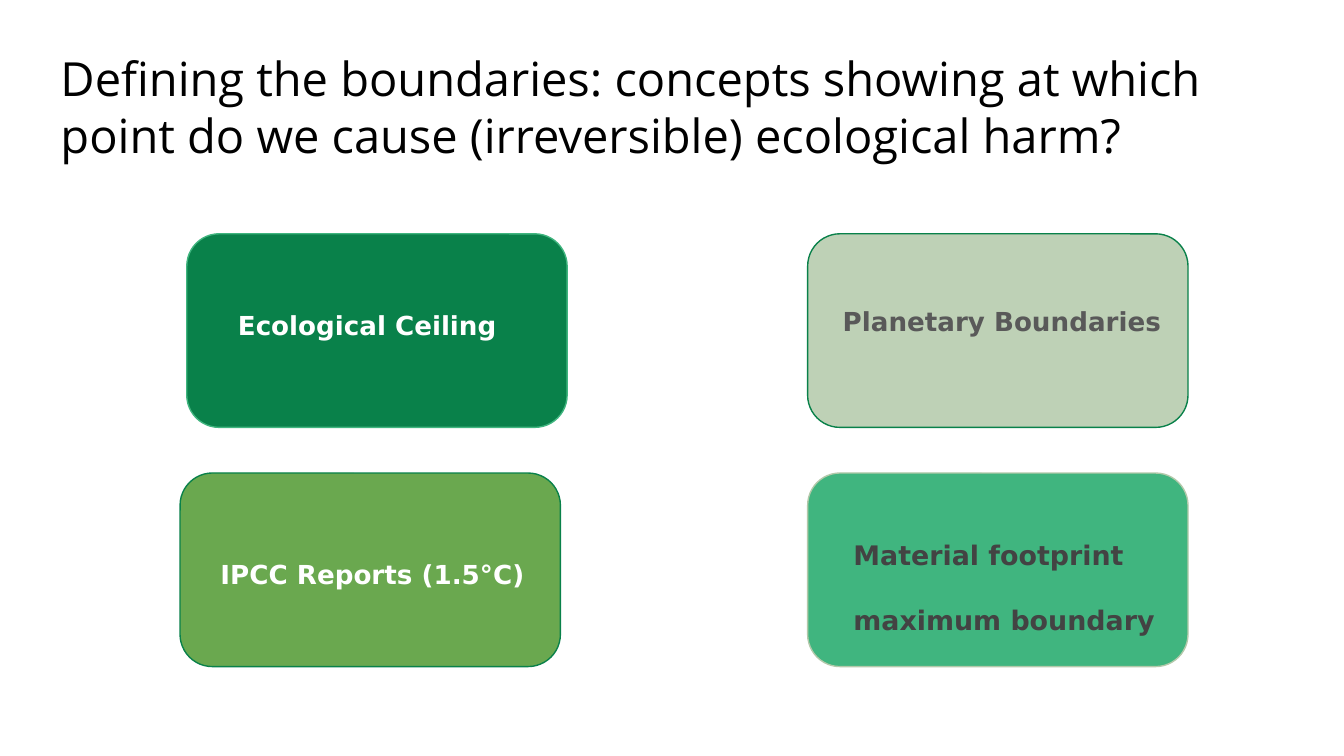
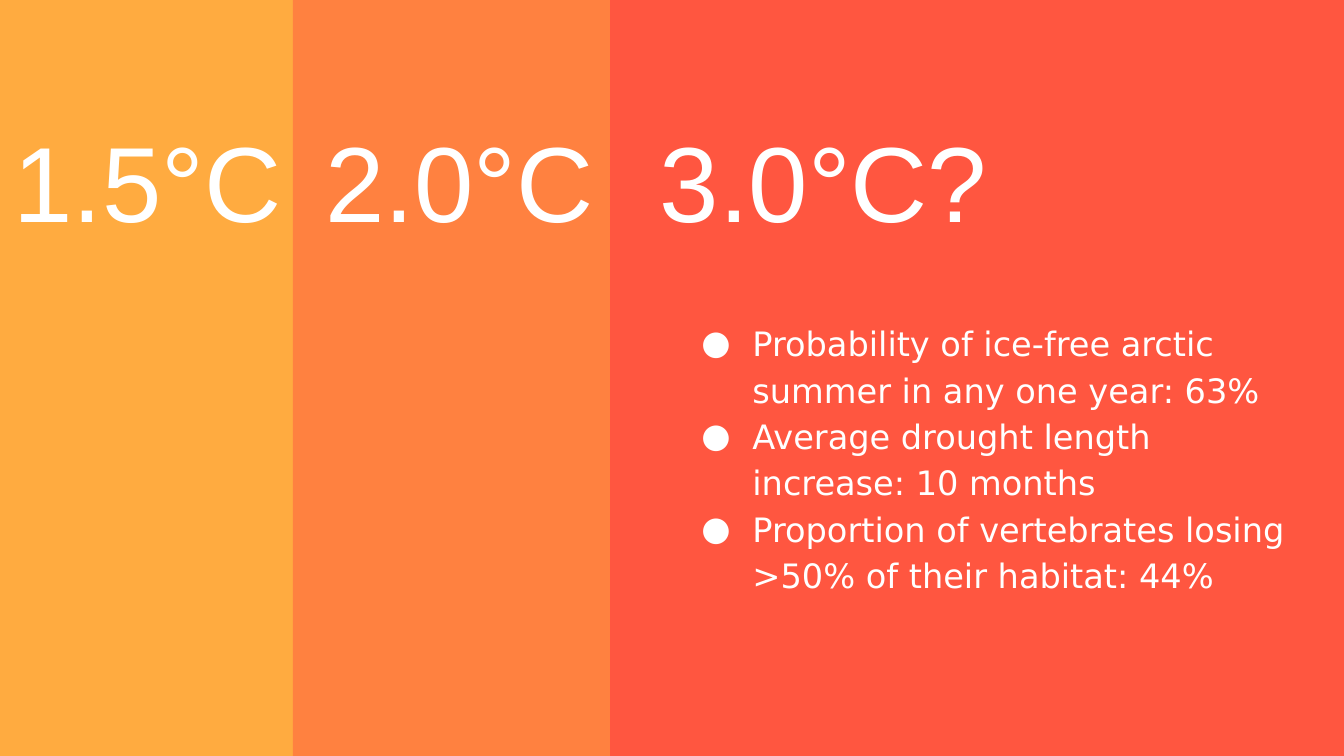
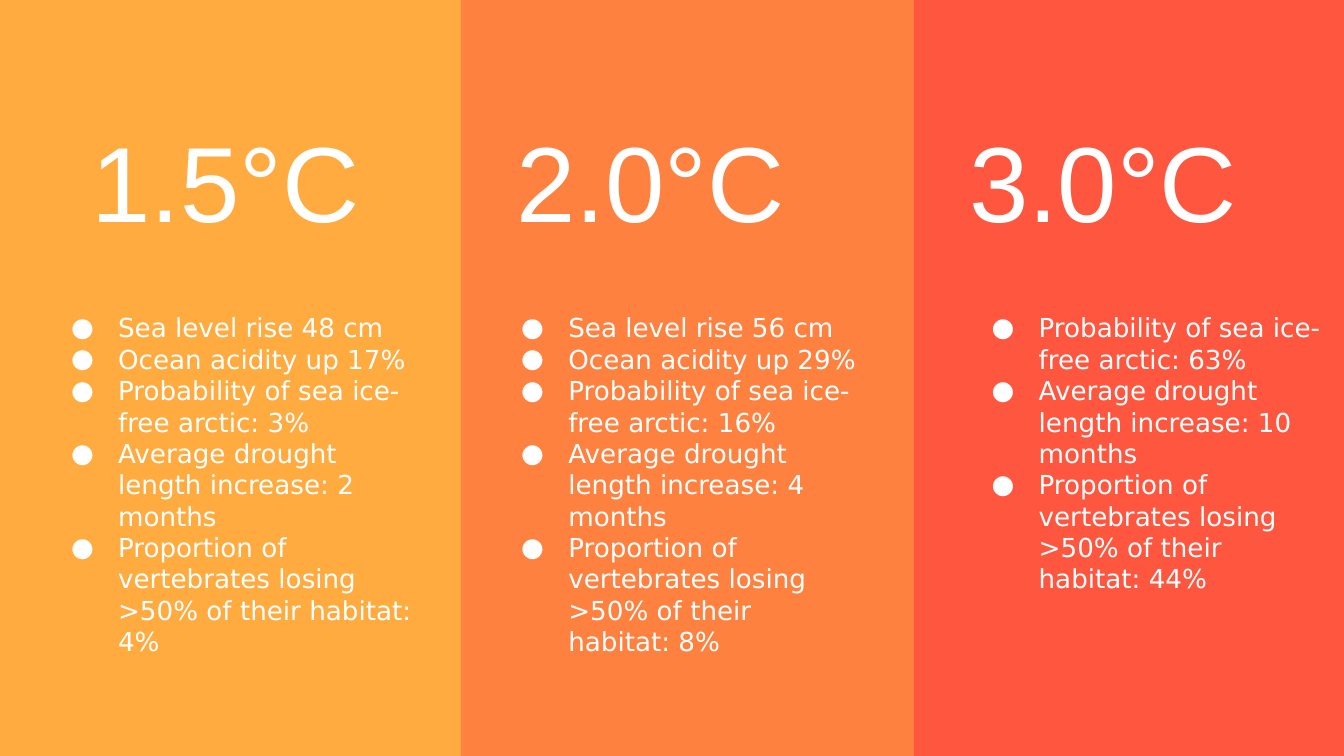
from lxml.etree import SubElement
from pptx import Presentation
from pptx.dml.color import RGBColor as RGB
from pptx.enum.shapes import MSO_SHAPE as Form
from pptx.enum.text import MSO_ANCHOR as Anchor, MSO_AUTO_SIZE as Fit, PP_ALIGN as Align
from pptx.oxml.ns import qn
from pptx.util import Inches, Pt

WHITE = RGB(0xFF, 0xFF, 0xFF)
BLACK = RGB(0, 0, 0)
DARK = RGB(0x43, 0x43, 0x43)
GRAY = RGB(0x59, 0x59, 0x59)
PINE = RGB(0x09, 0x81, 0x4A)
MINT = RGB(0x40, 0xB5, 0x7F)
LEAF = RGB(0x6A, 0xA8, 0x4F)
SAGE = RGB(0xB3, 0xC9, 0xAA)
AMBER = RGB(0xFF, 0xAB, 0x40)
ORANGE = RGB(0xFF, 0x81, 0x40)
RED = RGB(0xFF, 0x56, 0x40)
WIDTH = 10
HEIGHT = WIDTH * 9 / 16
BODY = "DejaVu Sans"
COMPARE = 4


def place(shape, box):
    """Set a shape's left, top, width and height in inches."""
    shape.left, shape.top, shape.width, shape.height = map(Inches, box)


def write(shape, *lines, size=14, font=BODY, color=WHITE, bold=False,
          space=1.0, after=0, hang=None, fit=Fit.NONE):
    """Fill a shape with formatted paragraphs, bulleted when hang is given."""
    frame = shape.text_frame
    frame.text = "\n".join(lines)
    frame.word_wrap, frame.auto_size = True, fit
    frame.vertical_anchor = Anchor.TOP
    frame.margin_left = frame.margin_right = Inches(0.1)
    frame.margin_top = frame.margin_bottom = Inches(0.1)
    for para in frame.paragraphs:
        para.alignment = Align.LEFT
        para.line_spacing = space
        para.space_before, para.space_after = Pt(0), Pt(after)
        bullet(para, hang, color)
        face = para.runs[0].font
        face.size, face.name, face.bold = Pt(size), font, bold
        face.color.rgb = color


def bullet(para, hang, color):
    """Give a paragraph a round bullet, or none."""
    props = para._p.get_or_add_pPr()
    props.set("marL", str(Inches(0.5) if hang else 0))
    props.set("indent", str(-Inches(hang) if hang else 0))
    if hang:
        tint = SubElement(props, qn("a:buClr"))
        SubElement(tint, qn("a:srgbClr"), val=str(color))
        SubElement(props, qn("a:buFont"), typeface=BODY)
        SubElement(props, qn("a:buChar"), char="●")
    else:
        SubElement(props, qn("a:buNone"))


def panel(slide, form, box, fill, line=None, alpha=None):
    """Draw a filled shape with an optional outline and opacity."""
    shape = slide.shapes.add_shape(form, *map(Inches, box))
    shape.shadow.inherit = False
    shape.fill.solid()
    shape.fill.fore_color.rgb = fill
    if alpha:
        tint = shape.element.spPr.find(f".//{qn('a:srgbClr')}")
        SubElement(tint, qn("a:alpha"), val=str(alpha * 1000))
    if line:
        shape.line.color.rgb = line
        shape.line.width = Pt(0.75)
    else:
        shape.line.fill.background()


def start(deck, color):
    """Add a slide with a plain background and its title and body holders."""
    slide = deck.slides.add_slide(deck.slide_layouts[COMPARE])
    slide.background.fill.solid()
    slide.background.fill.fore_color.rgb = color
    return slide, {h.placeholder_format.idx: h for h in slide.placeholders}


def drop(shape):
    """Remove a shape from its slide."""
    shape.element.getparent().remove(shape.element)


def raise_up(shape):
    """Bring a shape to the front."""
    shape.element.getparent().append(shape.element)


def card(slide, hold, box, inset, text, fill, line, alpha=None, **style):
    """Draw a rounded card with its label at an inset from the corner."""
    left, top, *_ = box
    panel(slide, Form.FLOWCHART_ALTERNATE_PROCESS, box, fill, line, alpha)
    dx, dy, wide, high = inset
    place(hold, (left + dx, top + dy, wide, high))
    write(hold, text, bold=True, after=12, **style)
    raise_up(hold)


def bounds(deck):
    """Build the slide of four boundary concepts."""
    slide, holds = start(deck, WHITE)
    place(holds[0], (0.35, 0.27, 9.47, 1.02))
    write(holds[0], "Defining the boundaries: concepts showing at which point "
          "do we cause (irreversible) ecological harm?",
          size=25.2, font="Open Sans", color=BLACK)
    wide, high, right, upper, lower = 2.83, 1.44, 6.01, 1.74, 3.52
    card(slide, holds[1], (1.39, upper, wide, high), (0.28, 0.43, 2.16, 0.64),
         "Ecological Ceiling", PINE, MINT, space=1.15)
    card(slide, holds[2], (right, upper, wide, high), (0.16, 0.4, 2.76, 0.64),
         "Planetary Boundaries", SAGE, PINE, alpha=85, color=GRAY, space=1.15)
    card(slide, holds[3], (1.34, lower, wide, high), (0.2, 0.5, 2.54, 0.69),
         "IPCC Reports (1.5°C)", LEAF, PINE, space=1.15)
    card(slide, holds[4], (right, lower, wide, high), (0.24, 0.15, 2.48, 1.13),
         "Material footprint maximum boundary", MINT, SAGE,
         color=DARK, size=14.4, space=2.0)


def bands(deck, edges, heads):
    """Build a slide of three heat bands, each with its temperature."""
    slide, holds = start(deck, AMBER)
    mid, last = edges
    panel(slide, Form.RECTANGLE, (mid, 0, last - mid, HEIGHT), ORANGE)
    panel(slide, Form.RECTANGLE, (last, -0.03, 10.09 - last, 5.68), RED)
    for idx, (left, text) in enumerate(heads, 1):
        place(holds[idx], (left, 0.62, 2.68, 1.29))
        write(holds[idx], text, size=57.2, font="Arial", space=1.15, after=12)
        raise_up(holds[idx])
    drop(holds[0])
    drop(holds[4])
    return slide


def points(slide, box, lines, **style):
    """Add a bulleted list."""
    area = slide.shapes.add_textbox(*map(Inches, box))
    write(area, *lines, fit=Fit.SHAPE_TO_FIT_TEXT, **style)


def effects(ice, months, loss, sea=None, acid=None):
    """Return the list of effects at one temperature."""
    ocean = [f"Sea level rise {sea} cm", f"Ocean acidity up {acid}%"] if sea else []
    return ocean + [
        f"Probability of sea ice-free arctic: {ice}%",
        f"Average drought length increase: {months} months",
        f"Proportion of vertebrates losing >50% of their habitat: {loss}%"]


def outlook(deck):
    """Build the slide that asks about three degrees."""
    slide = bands(deck, (2.18, 4.54),
                  [(0, "1.5°C"), (2.32, "2.0°C"), (4.81, "3.0°C?")])
    first = "Probability of ice-free arctic summer in any one year: 63%"
    points(slide, (5, 2.26, 4.81, 2.25), [first] + effects(63, 10, 44)[1:],
           size=18, space=1.15, hang=0.38)


def compare(deck):
    """Build the slide that compares the three temperatures."""
    slide = bands(deck, (3.43, 6.8),
                  [(0.58, "1.5°C"), (3.74, "2.0°C"), (7.11, "3.0°C")])
    for left, wide, high, lines in (
            (0.28, 2.99, 2.79, effects(3, 2, 4, sea=48, acid=17)),
            (3.63, 2.85, 3.03, effects(16, 4, 8, sea=56, acid=29)),
            (7.13, 2.85, 2.32, effects(63, 10, 44))):
        points(slide, (left, 2.22, wide, high), lines, hang=0.35)


def main():
    """Build and save the deck."""
    deck = Presentation()
    deck.slide_width, deck.slide_height = Inches(WIDTH), Inches(HEIGHT)
    bounds(deck)
    outlook(deck)
    compare(deck)
    deck.save("out.pptx")


if __name__ == "__main__":
    main()
